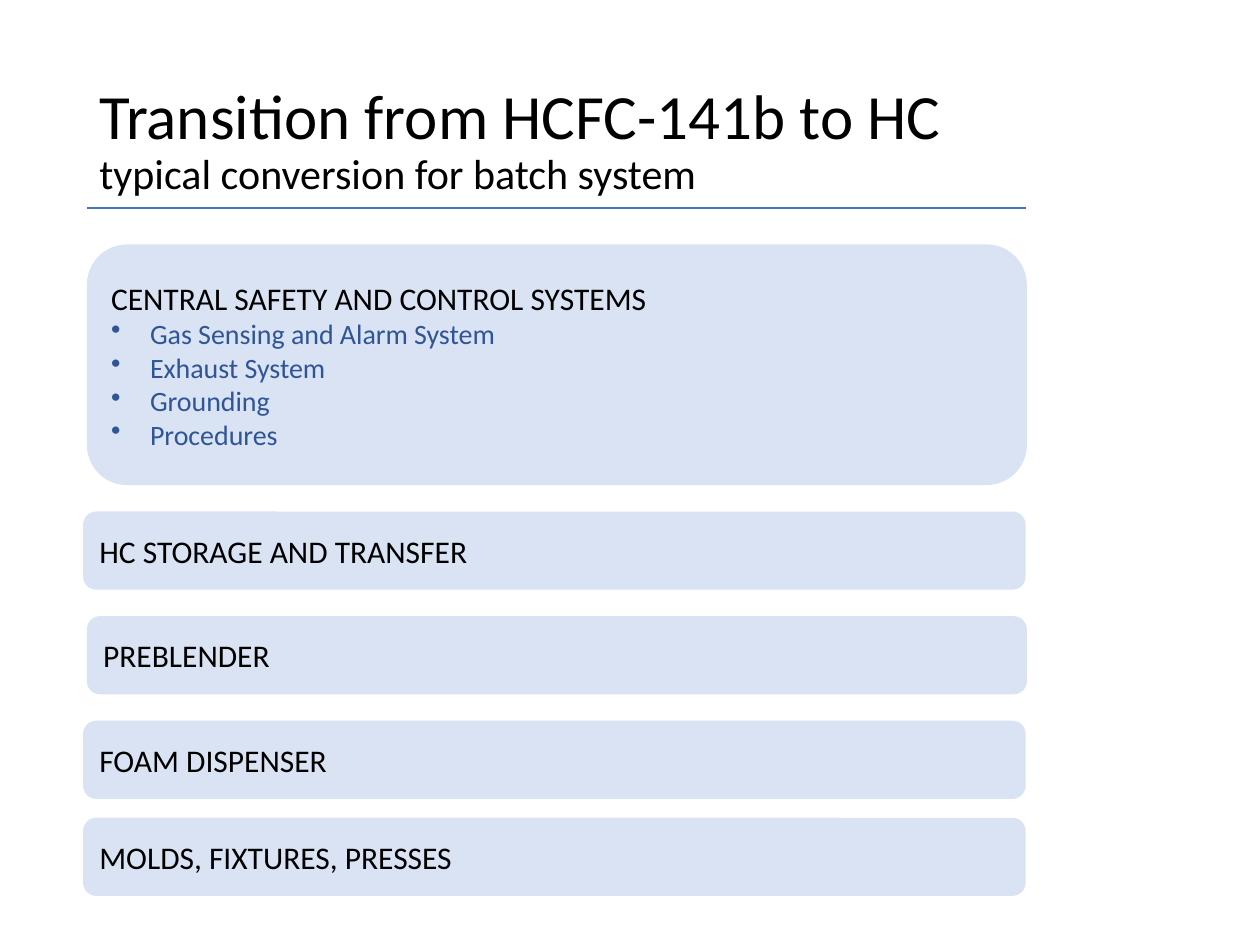
from dataclasses import dataclass

from lxml.etree import SubElement
from pptx import Presentation
from pptx.dml.color import RGBColor as RGB
from pptx.enum.shapes import MSO_CONNECTOR as Link, MSO_SHAPE as Shape
from pptx.enum.text import MSO_ANCHOR as Anchor, PP_ALIGN as Align
from pptx.oxml.ns import qn
from pptx.util import Inches, Pt


@dataclass(frozen=True)
class Theme:
    font: str = "Calibri"
    ink: RGB = RGB(0, 0, 0)
    note: RGB = RGB(0x2F, 0x55, 0x97)
    rule: RGB = RGB(0x44, 0x72, 0xC4)
    panel: RGB = RGB(0xDA, 0xE3, 0xF3)
    title: int = 36
    sub: int = 24
    head: int = 18
    item: int = 16


@dataclass(frozen=True)
class Panel:
    head: str
    left: float
    top: float
    width: float
    height: float = 0.62
    items: tuple[str, ...] = ()


THEME = Theme()
LEFT, WIDTH = 0.69, 7.46
OUTER, WIDE = 0.66, 7.48

PANELS = (
    Panel("CENTRAL SAFETY AND CONTROL SYSTEMS", LEFT, 1.94, WIDTH, 1.91,
          ("Gas Sensing and Alarm System", "Exhaust System",
           "Grounding", "Procedures")),
    Panel("HC STORAGE AND TRANSFER", OUTER, 4.06, WIDE),
    Panel("PREBLENDER", LEFT, 4.89, WIDTH),
    Panel("FOAM DISPENSER", OUTER, 5.72, WIDE),
    Panel("MOLDS, FIXTURES, PRESSES", OUTER, 6.49, WIDE),
)


def add_run(para, text: str, size: int, color: RGB) -> None:
    run = para.add_run()
    run.text = text
    run.font.name = THEME.font
    run.font.size = Pt(size)
    run.font.color.rgb = color


def set_bullet(para, indent: float = 0.31) -> None:
    props = para._p.get_or_add_pPr()
    props.set("marL", str(Inches(indent)))
    props.set("indent", str(-Inches(indent)))
    SubElement(props, qn("a:buChar"), char="•")


def add_rule(slide) -> None:
    y = Inches(1.65)
    rule = slide.shapes.add_connector(
        Link.STRAIGHT, Inches(LEFT), y, Inches(8.14), y)
    rule.line.color.rgb = THEME.rule
    rule.line.width = Pt(1)
    SubElement(rule._element.spPr, qn("a:effectLst"))


def add_title(slide) -> None:
    box = slide.shapes.add_textbox(
        Inches(LEFT), Inches(0.4), Inches(WIDTH), Inches(1.45))
    frame = box.text_frame
    frame.word_wrap = True
    frame.vertical_anchor = Anchor.MIDDLE
    para = frame.paragraphs[0]
    para.line_spacing = 0.9
    add_run(para, "Transition from HCFC-141b to HC", THEME.title, THEME.ink)
    para.add_line_break()
    add_run(para, "typical conversion for batch system", THEME.sub, THEME.ink)


def add_panel(slide, panel: Panel) -> None:
    shape = slide.shapes.add_shape(
        Shape.ROUNDED_RECTANGLE, Inches(panel.left), Inches(panel.top),
        Inches(panel.width), Inches(panel.height))
    shape.shadow.inherit = False
    shape.fill.solid()
    shape.fill.fore_color.rgb = THEME.panel
    shape.line.fill.background()
    frame = shape.text_frame
    frame.word_wrap = True
    frame.vertical_anchor = Anchor.MIDDLE
    para = frame.paragraphs[0]
    para.alignment = Align.LEFT
    add_run(para, panel.head, THEME.head, THEME.ink)
    for item in panel.items:
        para = frame.add_paragraph()
        para.alignment = Align.LEFT
        set_bullet(para)
        add_run(para, item, THEME.item, THEME.note)


def main() -> None:
    deck = Presentation()
    deck.slide_width, deck.slide_height = Inches(10), Inches(7.5)
    slide = deck.slides.add_slide(deck.slide_layouts[6])
    add_rule(slide)
    add_title(slide)
    for panel in PANELS:
        add_panel(slide, panel)
    deck.save("out.pptx")


if __name__ == "__main__":
    main()
